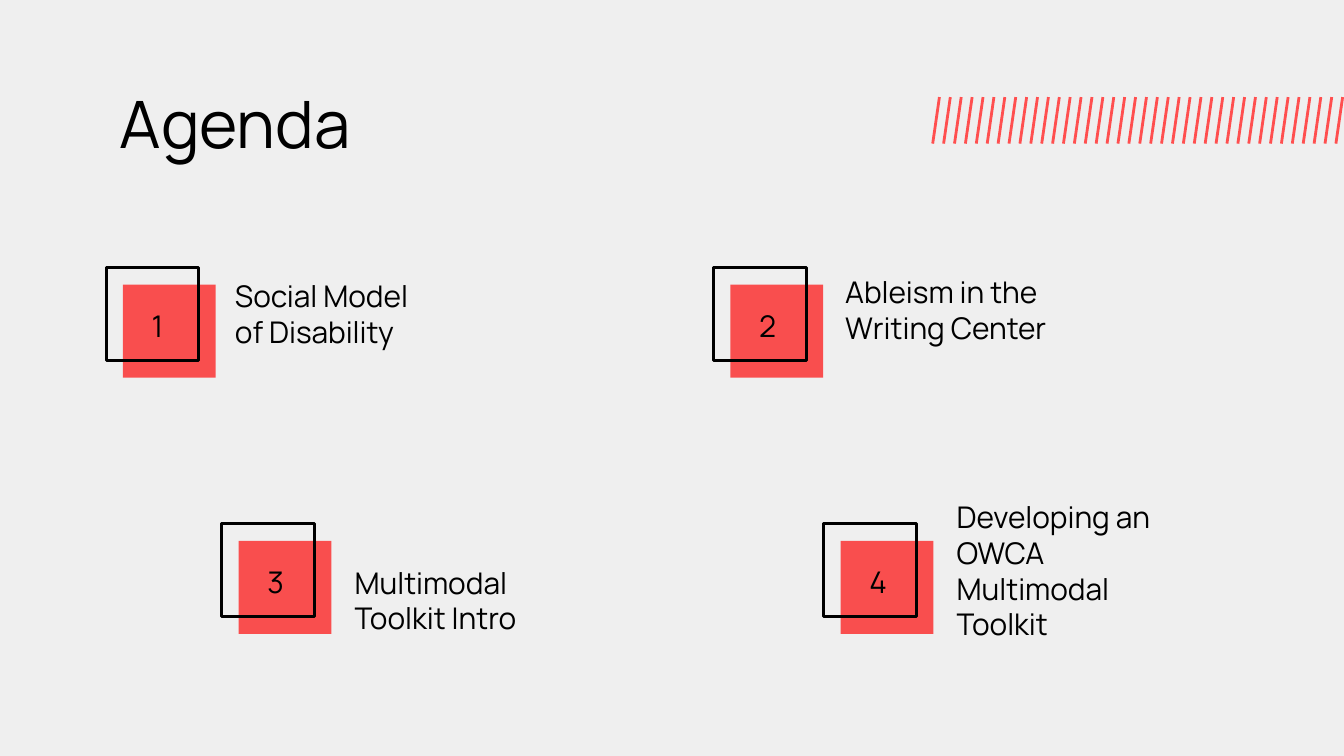
import pptx
import pptx.dml.color
import pptx.enum.shapes
import pptx.enum.text
import pptx.oxml.ns
import pptx.util
from lxml import etree

BACKGROUND = pptx.dml.color.RGBColor(0xEF, 0xEF, 0xEF)
BLACK = pptx.dml.color.RGBColor(0x00, 0x00, 0x00)
RED = pptx.dml.color.RGBColor(0xFF, 0x00, 0x00)
CORAL = pptx.dml.color.RGBColor(0xFF, 0x4F, 0x4F)

presentation = pptx.Presentation()
presentation.slide_width = pptx.util.Inches(10)
presentation.slide_height = pptx.util.Inches(5.625)
column = presentation.slide_width / 100
row = presentation.slide_height / 100


def grid(left, top, width, height):
    """Turn hundredths of the slide's width and height into lengths."""
    return [pptx.util.Emu(round(length)) for length in
            (left * column, top * row, width * column, height * row)]


def write(shape, text, size=16, anchor=pptx.enum.text.MSO_ANCHOR.TOP):
    frame = shape.text_frame
    frame.word_wrap = True
    frame.auto_size = pptx.enum.text.MSO_AUTO_SIZE.NONE
    frame.vertical_anchor = anchor
    frame.margin_left = frame.margin_right = pptx.util.Inches(0.1)
    frame.margin_top = frame.margin_bottom = pptx.util.Inches(0.1)
    paragraph = frame.paragraphs[0]
    paragraph.alignment = pptx.enum.text.PP_ALIGN.LEFT
    run = paragraph.add_run()
    run.text = text
    run.font.name = "Manrope"
    run.font.size = pptx.util.Pt(size)
    run.font.color.rgb = BLACK


slide = presentation.slides.add_slide(presentation.slide_layouts[5])
slide.background.fill.solid()
slide.background.fill.fore_color.rgb = BACKGROUND

# Band of slanted strokes running to the right edge
STROKES = 38
FIRST_STROKE, LAST_STROKE = 69.9, 99.9
stroke_gap = (LAST_STROKE - FIRST_STROKE) / (STROKES - 1)
for number in range(STROKES):
    top_end = FIRST_STROKE + number * stroke_gap
    left, top, slant, height = grid(top_end, 12.85, 0.5, 6.15)
    stroke = slide.shapes.add_connector(
        pptx.enum.shapes.MSO_CONNECTOR.STRAIGHT,
        left, top, left - slant, top + height)
    stroke.line.color.rgb = CORAL
    stroke.line.width = pptx.util.Pt(1.5)
    etree.SubElement(stroke._element.spPr, pptx.oxml.ns.qn("a:effectLst"))

title = slide.shapes.title
title.left, title.top, title.width, title.height = grid(7.9, 9.2, 25.8, 11.2)
write(title, "Agenda", size=35)

# Badge left and top, then the label with its left, top, width and height
agenda = [
    (7.9, 35.4, "Social Model of Disability", (16.5, 38.2, 17.2, 9.8)),
    (53.1, 35.4, "Ableism in the Writing Center", (61.9, 37.7, 23.1, 9.8)),
    (16.5, 69.3, "Multimodal Toolkit Intro", (25.4, 76.1, 18.9, 9.8)),
    (61.3, 69.3, "Developing an OWCA Multimodal Toolkit", (70.2, 64.5, 17.2, 22.2)),
]
RECTANGLE = pptx.enum.shapes.MSO_SHAPE.RECTANGLE
for number, (left, top, label, label_place) in enumerate(agenda, start=1):
    square = slide.shapes.add_shape(
        RECTANGLE, *grid(left + 1.25, top + 2.25, 6.9, 12.3))
    square.shadow.inherit = False
    square.fill.solid()
    square.fill.fore_color.rgb = RED
    square.line.fill.background()
    color = square._element.spPr.find(".//" + pptx.oxml.ns.qn("a:srgbClr"))
    etree.SubElement(color, pptx.oxml.ns.qn("a:alpha"), val="67000")

    outline = slide.shapes.add_shape(RECTANGLE, *grid(left, top, 6.9, 12.3))
    outline.shadow.inherit = False
    outline.fill.background()
    outline.line.color.rgb = BLACK
    outline.line.width = pptx.util.Pt(1.5)

    write(slide.shapes.add_textbox(*grid(left + 2.4, top + 3.5, 3.1, 8.4)),
          str(number))
    write(slide.shapes.add_textbox(*grid(*label_place)), label,
          anchor=pptx.enum.text.MSO_ANCHOR.BOTTOM)

presentation.save("out.pptx")
